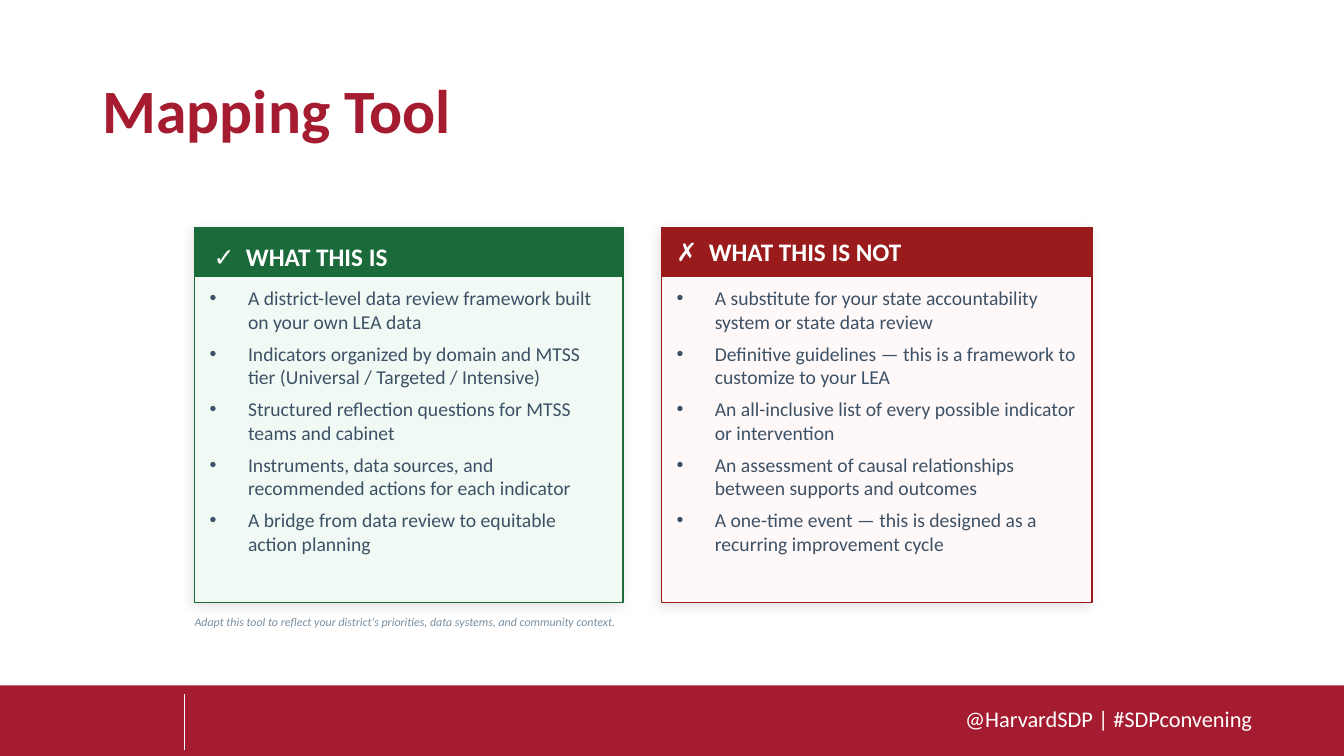
from pptx import Presentation
from pptx.dml.color import RGBColor
from pptx.enum.shapes import MSO_CONNECTOR, MSO_SHAPE
from pptx.enum.text import MSO_ANCHOR, PP_ALIGN
from pptx.oxml.ns import qn
from pptx.util import Inches, Pt
from lxml import etree

RECTANGLE = MSO_SHAPE.RECTANGLE
STRAIGHT = MSO_CONNECTOR.STRAIGHT
TOP, MIDDLE = MSO_ANCHOR.TOP, MSO_ANCHOR.MIDDLE
LEFT, RIGHT = PP_ALIGN.LEFT, PP_ALIGN.RIGHT

WHITE = RGBColor(0xFF, 0xFF, 0xFF)
CRIMSON = RGBColor(0xA5, 0x1C, 0x30)
GREEN = RGBColor(0x1B, 0x6B, 0x3A)
PALE_GREEN = RGBColor(0xF0, 0xF9, 0xF4)
RED = RGBColor(0x99, 0x1B, 0x1B)
PALE_RED = RGBColor(0xFE, 0xF8, 0xF8)
SLATE = RGBColor(0x3D, 0x51, 0x66)
GREY = RGBColor(0x7A, 0x8F, 0xA0)

CARD_TOP, CARD_HEIGHT, HEADER_HEIGHT = 2.26, 3.72, 0.48
CARD_PADDING = 0.15
BULLET_INDENT = 0.38
HEADING_TAB = 0.32

IS_POINTS = [
    "A district-level data review framework built on your own LEA data",
    "Indicators organized by domain and MTSS tier (Universal / Targeted / Intensive)",
    "Structured reflection questions for MTSS teams and cabinet",
    "Instruments, data sources, and recommended actions for each indicator",
    "A bridge from data review to equitable action planning",
]
IS_NOT_POINTS = [
    "A substitute for your state accountability system or state data review",
    "Definitive guidelines — this is a framework to customize to your LEA",
    "An all-inclusive list of every possible indicator or intervention",
    "An assessment of causal relationships between supports and outcomes",
    "A one-time event — this is designed as a recurring improvement cycle",
]


def sub(parent, tag, **attributes):
    """Append a DrawingML child element with the given attributes."""
    values = {name: str(value) for name, value in attributes.items()}
    return etree.SubElement(parent, qn(tag), values)


class SlideBuilder:
    font = "Calibri"

    def __init__(self, slide):
        self.shapes = slide.shapes

    def rectangle(self, left, top, width, height, fill, line=None, shadow=False):
        box = self.shapes.add_shape(
            RECTANGLE, Inches(left), Inches(top), Inches(width), Inches(height))
        box.shadow.inherit = False
        box.fill.solid()
        box.fill.fore_color.rgb = fill
        if line is None:
            box.line.fill.background()
        else:
            box.line.color.rgb = line
            box.line.width = Pt(1)
        if shadow:
            effects = box._element.spPr.find(qn("a:effectLst"))
            outer = sub(effects, "a:outerShdw", blurRad=Pt(8), dist=Pt(3),
                        dir=135 * 60000, algn="bl", rotWithShape=0)
            sub(sub(outer, "a:srgbClr", val="000000"), "a:alpha", val=10000)

    def divider(self, x, top, bottom, color):
        line = self.shapes.add_connector(
            STRAIGHT, Inches(x), Inches(top), Inches(x), Inches(bottom))
        line.line.color.rgb = color
        line.line.width = Pt(0.5)
        sub(line._element.spPr, "a:effectLst")

    def text(self, left, top, width, height, lines, size, color, bold=False,
             italic=False, anchor=TOP, align=LEFT, insets=(0, 0, 0, 0),
             line_spacing=None, tab=None, bullets=False):
        box = self.shapes.add_textbox(
            Inches(left), Inches(top), Inches(width), Inches(height))
        frame = box.text_frame
        frame.word_wrap = True
        frame.vertical_anchor = anchor
        (frame.margin_left, frame.margin_top,
         frame.margin_right, frame.margin_bottom) = map(Inches, insets)
        for index, line in enumerate(lines):
            paragraph = frame.add_paragraph() if index else frame.paragraphs[0]
            paragraph.alignment = align
            if line_spacing:
                paragraph.line_spacing = line_spacing
            if bullets:
                self.bullet(paragraph)
            if tab:
                stops = sub(paragraph._p.get_or_add_pPr(), "a:tabLst")
                sub(stops, "a:tab", pos=Inches(tab), algn="l")
            run = paragraph.add_run()
            run.text = line
            run.font.name = self.font
            run.font.size = Pt(size)
            run.font.bold = bold
            run.font.italic = italic
            run.font.color.rgb = color

    def bullet(self, paragraph):
        paragraph.space_after = Pt(6)
        properties = paragraph._p.get_or_add_pPr()
        properties.set("marL", str(Inches(BULLET_INDENT)))
        properties.set("indent", str(-Inches(BULLET_INDENT)))
        sub(properties, "a:buFont", typeface="Arial")
        sub(properties, "a:buChar", char="•")

    def card(self, left, width, points_width, dark, pale, heading, heading_top, points):
        self.rectangle(left, CARD_TOP, width, CARD_HEIGHT, pale, dark, shadow=True)
        self.rectangle(left, CARD_TOP, width, HEADER_HEIGHT, dark, dark)
        text_left = left + CARD_PADDING
        self.text(text_left, CARD_TOP + 0.58, points_width, 2.98, points, 14, SLATE,
                  bullets=True)
        heading_left, heading_top = heading_top
        self.text(heading_left, heading_top, 4, 0.38, [heading], 18, WHITE, bold=True,
                  anchor=MIDDLE, tab=HEADING_TAB)


def main():
    presentation = Presentation()
    presentation.slide_width = Inches(13.33)
    presentation.slide_height = Inches(7.5)
    page = SlideBuilder(presentation.slides.add_slide(presentation.slide_layouts[6]))

    page.rectangle(0, 6.8, 13.33, 0.7, CRIMSON)
    page.text(8.39, 6.95, 4.03, 0.37, ["@HarvardSDP | #SDPconvening"], 16, WHITE,
              align=RIGHT, insets=(0.1, 0.05, 0, 0.05))
    page.divider(1.83, 6.89, 7.44, WHITE)
    page.text(0.92, 0.4, 11.5, 1.45, ["Mapping Tool"], 44, CRIMSON, bold=True,
              anchor=MIDDLE, insets=(0.1, 0.05, 0.1, 0.05), line_spacing=0.9)

    page.card(1.93, 4.25, 3.95, GREEN, PALE_GREEN,
              "✓\tWHAT THIS IS", (2.12, 2.35), IS_POINTS)
    page.card(6.56, 4.27, 3.98, RED, PALE_RED,
              "✗\tWHAT THIS IS NOT", (6.71, 2.3), IS_NOT_POINTS)
    page.text(1.93, 6.06, 9.2, 0.22,
              ["Adapt this tool to reflect your district's priorities, "
               "data systems, and community context."],
              8.5, GREY, italic=True, anchor=MIDDLE)

    presentation.save("out.pptx")


if __name__ == "__main__":
    main()
